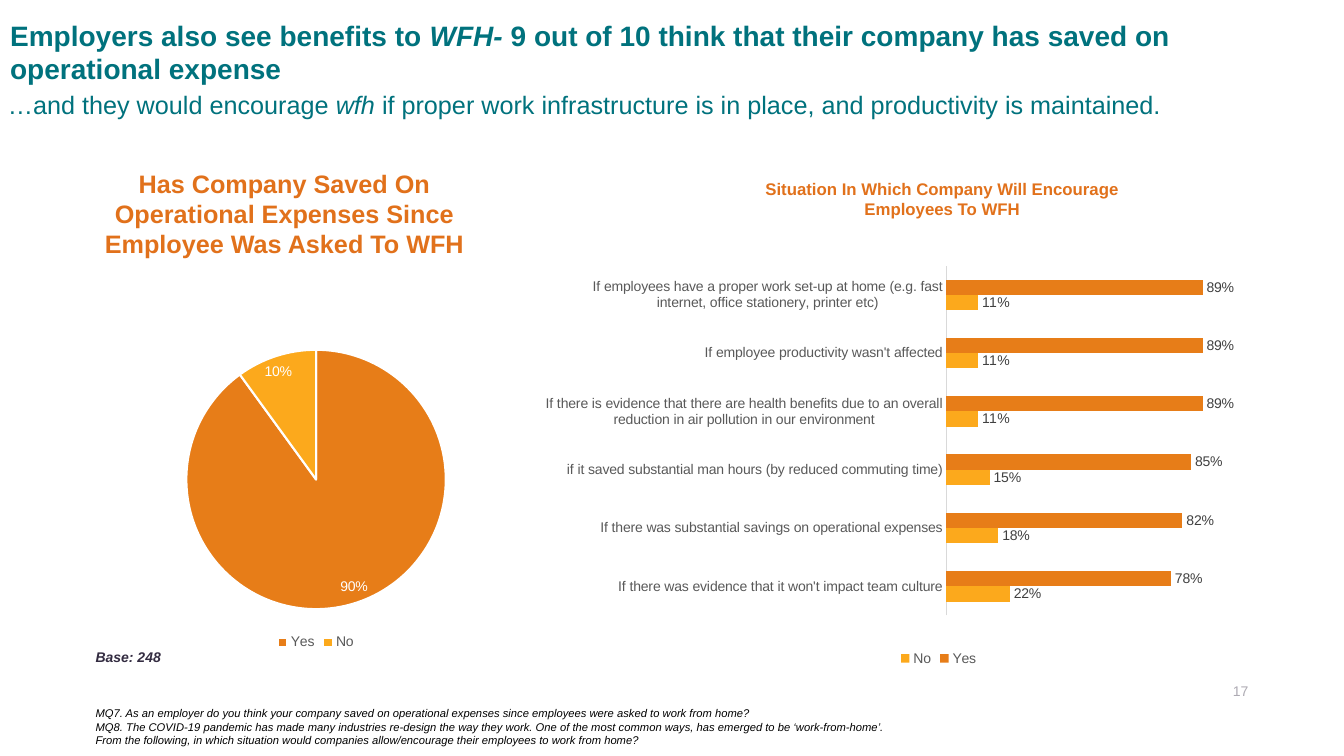
from lxml import etree
from pptx import Presentation
from pptx.chart.data import CategoryChartData
from pptx.dml.color import RGBColor
from pptx.enum import chart as ch, text as tx
from pptx.oxml import parse_xml
from pptx.oxml.ns import nsdecls, qn
from pptx.util import Inches, Pt

TEAL, HEADING, INK = "00727D", "E1711B", "332C41"
YES, NO = "E77D18", "FCA91C"
LEFT, CENTER, RIGHT = tx.PP_ALIGN.LEFT, tx.PP_ALIGN.CENTER, tx.PP_ALIGN.RIGHT


def style_font(font, size, color, bold=False, italic=False):
    font.name, font.size, font.bold, font.italic = "Arial", Pt(size), bold, italic
    font.color.rgb = RGBColor.from_string(color)


def write(shape, box, lines, size, color, bold=False, italic=False, align=LEFT):
    """Place a text shape; every second piece of a line split at * toggles italics."""
    shape.left, shape.top, shape.width, shape.height = map(Inches, box)
    frame = shape.text_frame
    frame.word_wrap = True
    frame.auto_size = tx.MSO_AUTO_SIZE.NONE
    frame.vertical_anchor = tx.MSO_ANCHOR.TOP
    for index, line in enumerate(lines):
        paragraph = frame.add_paragraph() if index else frame.paragraphs[0]
        paragraph.alignment = align
        paragraph.space_before = Pt(0)
        for number, piece in enumerate(line.split("*")):
            run = paragraph.add_run()
            run.text = piece
            style_font(run.font, size, color, bold, italic != bool(number % 2))


presentation = Presentation()
presentation.slide_width, presentation.slide_height = Inches(13.33), Inches(7.5)
slide = presentation.slides.add_slide(presentation.slide_layouts[5])
shapes = slide.shapes

# Title and text
write(shapes.title, (0, 0.13, 13.23, 0.77),
      ["Employers also see benefits to *WFH- *9 out of 10 think that their company has saved on operational expense"],
      20, TEAL, bold=True)

text_boxes = [
    ((-0.02, 0.84, 12.66, 0.4),
     ["…and they would encourage *wfh *if proper work infrastructure is in place, and productivity is maintained."],
     18, TEAL, False, False, LEFT),
    ((0.61, 1.62, 4.42, 1.01),
     ["Has Company Saved On Operational Expenses Since Employee Was Asked To WFH"],
     18, HEADING, True, False, CENTER),
    ((7.39, 1.72, 3.91, 0.5),
     ["Situation In Which Company Will Encourage Employees To WFH"],
     12, HEADING, True, False, CENTER),
    ((0.85, 6.38, 1.78, 0.27), ["Base: 248"], 10, INK, True, True, LEFT),
    ((0.85, 6.96, 9.93, 0.5),
     ["MQ7. As an employer do you think your company saved on operational expenses since employees were asked to work from home?",
      "MQ8. The COVID-19 pandemic has made many industries re-design the way they work. One of the most common ways, has emerged to be ‘work-from-home’.",
      "From the following, in which situation would companies allow/encourage their employees to work from home?"],
     8, "000000", False, True, LEFT),
    ((11.42, 6.72, 1.06, 0.27), ["17"], 10, INK, False, False, RIGHT),
]
for box, *content in text_boxes:
    text_box = shapes.add_textbox(*map(Inches, box))
    write(text_box, box, *content)

# The page number, added last, is 40% opaque
page_color = text_box.element.find(".//" + qn("a:srgbClr"))
etree.SubElement(page_color, qn("a:alpha")).set("val", "40000")

# Charts
savings_data = CategoryChartData(number_format="0%")
savings_data.categories = ["Yes", "No"]
savings_data.add_series("Series 1", [0.9, 0.1])

situation_data = CategoryChartData(number_format="0%")
situation_data.categories = [
    "If employees have a proper work set-up at home (e.g. fast internet, office stationery, printer etc)",
    "If employee productivity wasn't affected",
    "If there is evidence that there are health benefits due to an overall reduction in air pollution in our environment",
    "if it saved substantial man hours (by reduced commuting time)",
    "If there was substantial savings on operational expenses",
    "If there was evidence that it won't impact team culture",
]
situation_data.add_series("Yes", [0.89, 0.89, 0.89, 0.85, 0.82, 0.78])
situation_data.add_series("No", [0.11, 0.11, 0.11, 0.15, 0.18, 0.22])

chart_specs = [
    (ch.XL_CHART_TYPE.PIE, (1.15, 3.15, 3.97, 3.34), savings_data,
     "FFFFFF", ch.XL_LABEL_POSITION.BEST_FIT),
    (ch.XL_CHART_TYPE.BAR_CLUSTERED, (5.4, 2.47, 7.82, 4.18), situation_data,
     "404040", ch.XL_LABEL_POSITION.OUTSIDE_END),
]
charts = []
for chart_type, box, data, label_color, label_position in chart_specs:
    chart = shapes.add_chart(chart_type, *map(Inches, box), data).chart
    style_font(chart.font, 10, "000000")
    chart.has_title = False
    chart.has_legend = True
    chart.legend.position = ch.XL_LEGEND_POSITION.BOTTOM
    chart.legend.include_in_layout = False
    style_font(chart.legend.font, 10, "595959")
    for series in chart.plots[0].series:
        labels = series.data_labels
        labels.show_value = True
        labels.number_format, labels.number_format_is_linked = "0%", False
        labels.position = label_position
        style_font(labels.font, 10, label_color)
    charts.append(chart)
pie_chart, bar_chart = charts

pie_chart.plots[0].vary_by_categories = True
for index, color in enumerate([YES, NO]):
    slice_format = pie_chart.plots[0].series[0].points[index].format
    bar_format = bar_chart.plots[0].series[index].format
    for part in (slice_format, bar_format):
        part.fill.solid()
        part.fill.fore_color.rgb = RGBColor.from_string(color)
    slice_format.line.width = Pt(1.5)
    slice_format.line.color.rgb = RGBColor.from_string("FFFFFF")

bars = bar_chart.plots[0]
bars.vary_by_categories = False
bars.gap_width, bars.overlap = 182, 0

situation_axis = bar_chart.category_axis
situation_axis.reverse_order = True
situation_axis.major_tick_mark = situation_axis.minor_tick_mark = ch.XL_TICK_MARK.NONE
style_font(situation_axis.tick_labels.font, 10, "595959")
situation_axis.format.line.width = Pt(0.75)
situation_axis.format.line.color.rgb = RGBColor.from_string("D9D9D9")

share_axis = bar_chart.value_axis
share_axis.minimum_scale, share_axis.maximum_scale = 0, 1
share_axis.has_major_gridlines = False
share_axis.visible = False

# Fixed inner plot area, leaving room for the long category labels
plot_area = bar_chart.element.find(".//" + qn("c:plotArea"))
for old_layout in plot_area.findall(qn("c:layout")):
    plot_area.remove(old_layout)
plot_area.insert(0, parse_xml(
    f'<c:layout {nsdecls("c")}><c:manualLayout><c:layoutTarget val="inner"/>'
    '<c:xMode val="edge"/><c:yMode val="edge"/><c:x val="0.51"/><c:y val="0.04"/>'
    '<c:w val="0.365"/><c:h val="0.83"/></c:manualLayout></c:layout>'))

presentation.save("out.pptx")
